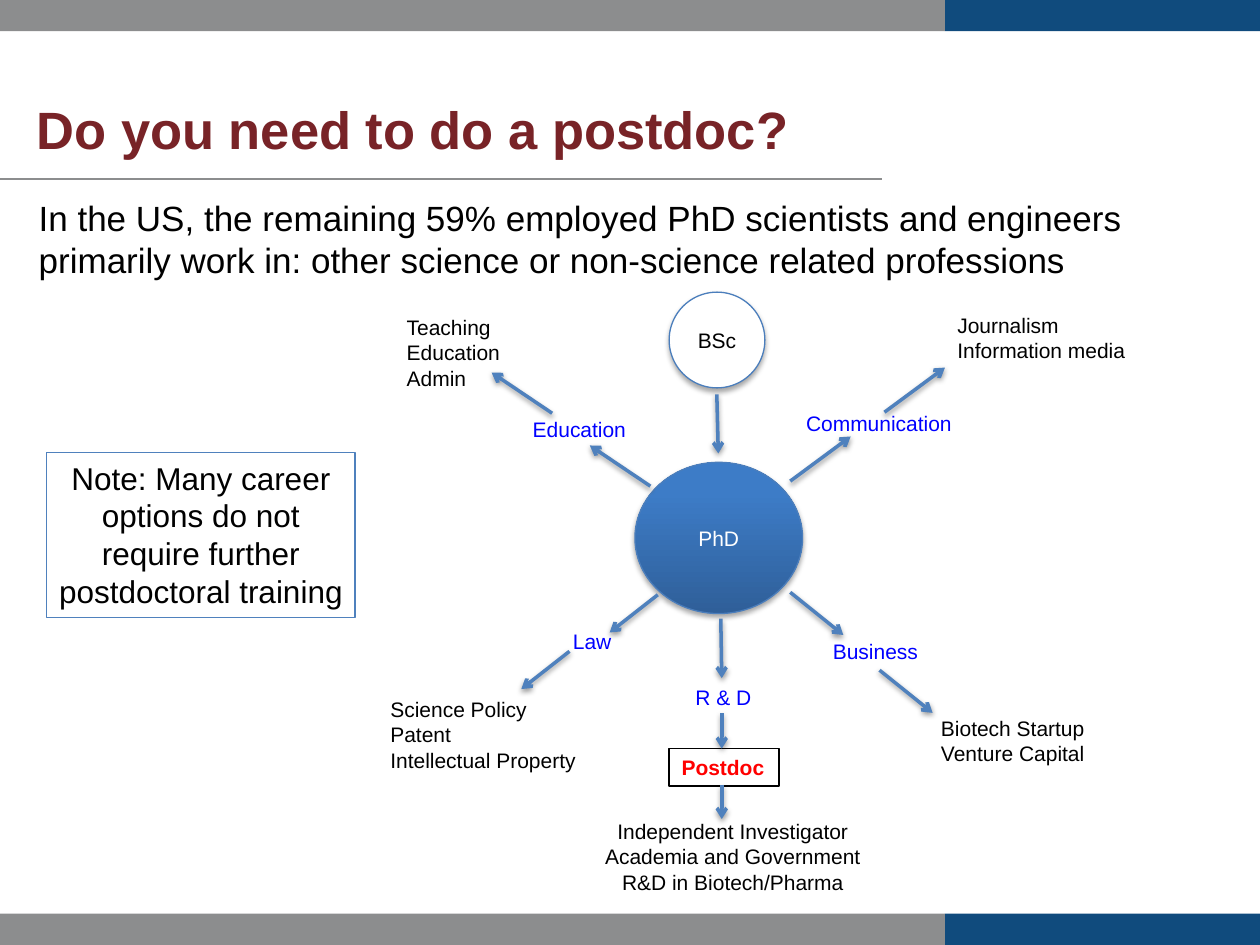
from lxml import etree
from pptx import Presentation, util as u
from pptx.dml.color import RGBColor
from pptx.enum import shapes, text
from pptx.oxml.ns import qn

THEME = dict(
    font="Arial", grey="8C8D8E", navy="104B7D", maroon="782327", black="000000",
    white="FFFFFF", blue="0000FF", red="FF0000", arrow="4F81BD", rim="4B7EBC",
    grad=[(0, "2F5F99"), (0.8, "3D7CC7")],
    title=30, body=20, note=18, label=12,
)

TITLE = "Do you need to do a postdoc?"
INTRO = ("In the US, the remaining 59% employed PhD scientists and engineers "
         "primarily work in: other science or non-science related professions")
NOTE = "Note: Many career options do not require further postdoctoral training"

# Lengths in cm. Both arrows of a branch share one step (dx, dy).
BRANCHES = [
    dict(label="Education", label_at=(10.49, 8.28, 2.41, 0.76),
         starts=[(13.11, 9.8), (11.13, 8.33)], step=(-1.22, -0.82),
         careers=["Teaching", "Education", "Admin"], careers_at=(7.95, 6.22, 2.41, 1.8)),
    dict(label="Communication", label_at=(16, 8.15, 3.48, 0.76),
         starts=[(15.93, 9.7), (17.83, 8.31)], step=(1.22, -0.9),
         careers=["Journalism", "Information media"], careers_at=(19.05, 6.17, 3.91, 1.27)),
    dict(label="Business", label_at=(16.54, 12.75, 2.24, 0.76),
         starts=[(15.93, 11.94), (17.73, 13.51)], step=(1.07, 0.86),
         careers=["Biotech Startup", "Venture Capital"], careers_at=(18.72, 14.3, 3.43, 1.27)),
    dict(label="Law", label_at=(11.3, 12.55, 1.3, 0.76),
         starts=[(13.26, 11.99), (11.48, 13.13)], step=(-0.97, 0.76),
         careers=["Science Policy", "Patent", "Intellectual Property"],
         careers_at=(7.62, 13.92, 4.29, 1.8)),
]
RESEARCH = ["Independent Investigator", "Academia and Government", "R&D in Biotech/Pharma"]
TRUNK_ARROWS = [  # BSc to PhD to R & D to Postdoc to research careers
    ((14.45, 7.95), (14.48, 9.14)),
    ((14.53, 12.47), (14.55, 13.67)),
    ((14.55, 14.38), (14.55, 15.09)),
    ((14.55, 15.82), (14.55, 16.51)),
]

SLIDE_W, SLIDE_H, BAR_H, BAR_SPLIT = 25.4, 19.05, 0.63, 19.05

prs = Presentation()
prs.slide_width, prs.slide_height = u.Cm(SLIDE_W), u.Cm(SLIDE_H)
s = prs.slides.add_slide(prs.slide_layouts[6])


def rgb(name):
    return RGBColor.from_string(THEME.get(name, name))


def add_shadow(sp, alpha, dist):
    """Give a shape a soft shadow straight below it; alpha in percent, dist in points."""
    fx = etree.SubElement(sp._element.spPr, qn("a:effectLst"))
    sh = etree.SubElement(fx, qn("a:outerShdw"), blurRad=str(u.Pt(3.1)), dist=str(u.Pt(dist)),
                          dir="5400000", rotWithShape="0")
    clr = etree.SubElement(sh, qn("a:srgbClr"), val=THEME["black"])
    etree.SubElement(clr, qn("a:alpha"), val=str(alpha * 1000))


def add_line(start, end, color, width):
    sp = s.shapes.add_connector(shapes.MSO_CONNECTOR.STRAIGHT, *map(u.Cm, start + end))
    sp.line.color.rgb = rgb(color)
    sp.line.width = u.Pt(width)
    return sp


def add_arrow(start, end):
    sp = add_line(start, end, "arrow", 2)
    etree.SubElement(sp.line._get_or_add_ln(), qn("a:tailEnd"), type="arrow")
    add_shadow(sp, 38, 1.6)


def add_shape(at, kind="RECTANGLE", fill=None, line=None, width=0.75, shadow=False):
    sp = s.shapes.add_shape(shapes.MSO_SHAPE[kind], *map(u.Cm, at))
    if fill == "grad":
        sp.fill.gradient()
        sp.fill.gradient_angle = 90
        for stop, (pos, color) in zip(sp.fill.gradient_stops, THEME["grad"]):
            stop.position, stop.color.rgb = pos, rgb(color)
    elif fill:
        sp.fill.solid()
        sp.fill.fore_color.rgb = rgb(fill)
    else:
        sp.fill.background()
    if line:
        sp.line.color.rgb = rgb(line)
        sp.line.width = u.Pt(width)
    else:
        sp.line.fill.background()
    if shadow:
        add_shadow(sp, 35, 1.8)
    else:
        sp.shadow.inherit = False
    return sp


def write(sp, lines, size="label", color="black", bold=False, align="LEFT", anchor="TOP",
          wrap=True, grow=False, inset=None):
    tf = sp.text_frame
    tf.word_wrap = wrap
    tf.vertical_anchor = text.MSO_ANCHOR[anchor]
    tf.auto_size = text.MSO_AUTO_SIZE.SHAPE_TO_FIT_TEXT if grow else text.MSO_AUTO_SIZE.NONE
    if inset is not None:
        tf.margin_left = tf.margin_right = tf.margin_top = tf.margin_bottom = u.Cm(inset)
    for i, line in enumerate(lines):
        p = tf.add_paragraph() if i else tf.paragraphs[0]
        p.alignment = text.PP_ALIGN[align]
        r = p.add_run()
        r.text = line
        r.font.name, r.font.size, r.font.bold = THEME["font"], u.Pt(THEME[size]), bold
        r.font.color.rgb = rgb(color)


def add_text(at, lines, **fmt):
    write(s.shapes.add_textbox(*map(u.Cm, at)), lines, **fmt)


# Frame and headings
add_line((0, 3.61), (17.78, 3.61), "grey", 0.75).shadow.inherit = False
for top in (0, SLIDE_H - BAR_H):
    add_shape((BAR_SPLIT, top, SLIDE_W - BAR_SPLIT, BAR_H), fill="navy")
    add_shape((0, top, BAR_SPLIT, BAR_H), fill="grey")
add_text((0.74, 1.96, 17.98, 1.27), [TITLE], size="title", color="maroon", bold=True,
         anchor="MIDDLE", inset=0)
add_text((0.53, 3.84, 23.29, 2.57), [INTRO], size="body")
write(add_shape((0.94, 9.12, 6.22, 3.33), line="arrow"), [NOTE], size="note",
      align="CENTER", grow=True)

# Trunk of the career map
for name, at, fill, color in [("PhD", (12.8, 9.32, 3.38, 3.05), "grad", "white"),
                              ("BSc", (13.49, 5.89, 1.93, 1.93), "white", "black")]:
    write(add_shape(at, "OVAL", fill, "rim", shadow=True), [name], color=color,
          align="CENTER", anchor="MIDDLE")
add_text((13.77, 13.67, 1.65, 0.76), ["R & D"], color="blue", wrap=False, grow=True)
write(add_shape((13.49, 15.09, 2.21, 0.76), line="black", width=1), ["Postdoc"],
      color="red", bold=True, wrap=False, grow=True)
add_text((11.79, 16.38, 5.97, 1.8), RESEARCH, align="CENTER", grow=True)
for start, end in TRUNK_ARROWS:
    add_arrow(start, end)

# Side branches
for b in BRANCHES:
    add_text(b["label_at"], [b["label"]], color="blue", wrap=False, grow=True)
    add_text(b["careers_at"], b["careers"], wrap=False, grow=True)
    for x, y in b["starts"]:
        add_arrow((x, y), (x + b["step"][0], y + b["step"][1]))

prs.save("out.pptx")
